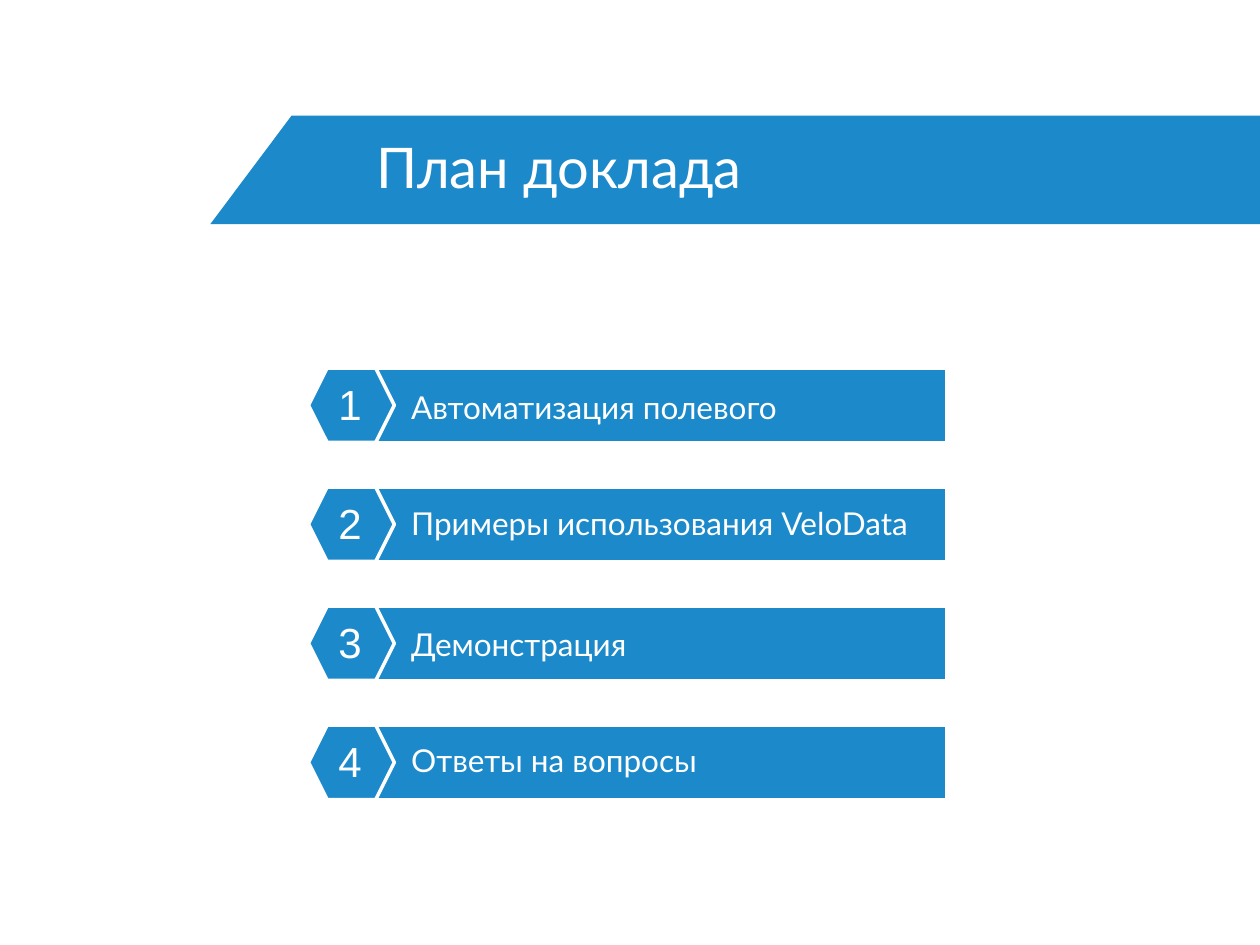
from pptx import Presentation
from pptx.dml.color import RGBColor
from pptx.enum.shapes import MSO_SHAPE as SHAPE
from pptx.enum.text import MSO_ANCHOR as ANCHOR, PP_ALIGN as ALIGN
from pptx.util import Cm, Pt

TITLE = "План доклада"
ITEMS = [
    ("Автоматизация полевого", 0.28),
    ("Примеры использования VeloData", 0.21),
    ("Демонстрация", 0.25),
    ("Ответы на вопросы", 0.19),
]
BLUE, WHITE = "1C8ACA", "FFFFFF"
HEADER = [(4.24, 4.52), (25.4, 4.52), (25.4, 2.33), (5.88, 2.33)]
TOP, PITCH, BAR_H = 7.42, 2.4, 1.5


def rgb(value):
    return RGBColor.from_string(value)


def paint(sp, line=None):
    sp.shadow.inherit = False
    sp.fill.solid()
    sp.fill.fore_color.rgb = rgb(BLUE)
    if line:
        sp.line.color.rgb = rgb(line)
        sp.line.width = Pt(2)
    else:
        sp.line.fill.background()


def add_bar(s, kind, x, y, w):
    paint(s.shapes.add_shape(kind, Cm(x), Cm(y), Cm(w), Cm(BAR_H)), WHITE)


def add_text(s, text, x, y, w, h, size=18, font="Lato", align=ALIGN.LEFT,
             anchor=ANCHOR.TOP, wrap=True):
    tf = s.shapes.add_textbox(Cm(x), Cm(y), Cm(w), Cm(h)).text_frame
    tf.word_wrap = wrap
    tf.vertical_anchor = anchor
    p = tf.paragraphs[0]
    p.alignment = align
    r = p.add_run()
    r.text = text
    r.font.size = Pt(size)
    r.font.name = font
    r.font.color.rgb = rgb(WHITE)


def main():
    prs = Presentation()
    prs.slide_width, prs.slide_height = Cm(25.4), Cm(19.05)
    s = prs.slides.add_slide(prs.slide_layouts[6])

    points = [(Cm(x), Cm(y)) for x, y in HEADER]
    fb = s.shapes.build_freeform(*points[0])
    fb.add_line_segments(points[1:], close=True)
    paint(fb.convert_to_shape())
    add_text(s, TITLE, 7.34, 2.56, 18.06, 1.57, size=32, anchor=ANCHOR.MIDDLE)

    for i, (label, drop) in enumerate(ITEMS):
        y = TOP + i * PITCH
        add_bar(s, SHAPE.RECTANGLE, 7.37, y, 11.71)
        add_bar(s, SHAPE.HEXAGON, 6.22, y, 1.73)
        add_text(s, label, 8.04, y + drop, 10.8, 1.02)
        add_text(s, str(i + 1), 6.56, y + 0.08, 0.99, 1.27, size=24,
                 font="Arial", align=ALIGN.CENTER, wrap=False)

    prs.save("out.pptx")


if __name__ == "__main__":
    main()
